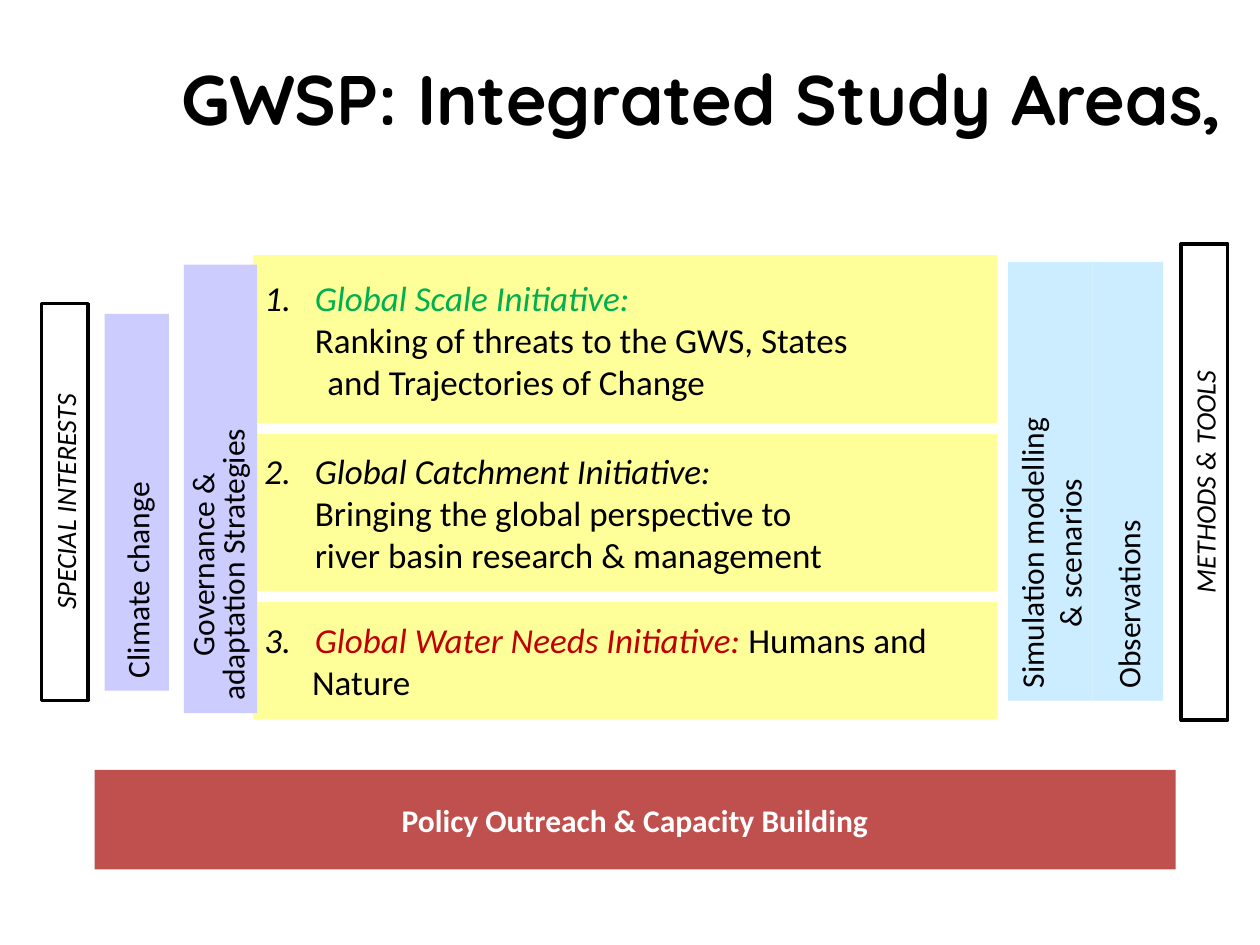
from lxml import etree
from pptx import Presentation
from pptx.dml.color import RGBColor
from pptx.enum import shapes, text
from pptx.oxml import ns
from pptx.util import Pt

BLACK = RGBColor(0, 0, 0)
WHITE = RGBColor(255, 255, 255)
YELLOW = RGBColor(0xFF, 0xFF, 0x99)
LILAC = RGBColor(0xCC, 0xCC, 0xFF)
SKY = RGBColor(0xCC, 0xEC, 0xFF)
BRICK = RGBColor(0xC0, 0x50, 0x4D)
GREEN = RGBColor(0, 0xB0, 0x50)
RED = RGBColor(0xC0, 0, 0)

TITLE = "GWSP: Integrated Study Areas,"
OUTREACH = "Policy Outreach & Capacity Building"
INDENT = 28.8

# top, height, heading, heading colour, rest of heading line, (line, indent)
INITIATIVES = [
    (145.5, 96.5, "Global Scale Initiative:", GREEN, "",
     [("Ranking of threats to the GWS, States", INDENT),
      ("and Trajectories of Change", 36)]),
    (247.7, 90.7, "Global Catchment Initiative:", BLACK, "",
     [("Bringing the global perspective to", INDENT),
      ("river basin research & management", INDENT)]),
    (343.5, 67.7, "Global Water Needs Initiative:", RED, " Humans and",
     [("Nature", 27.2)]),
]
THEMES = [
    (59.8, 179.3, 36.7, 215.3, LILAC, ["Climate change"], 1),
    (105.1, 151.2, 41.8, 256.3, LILAC, ["Governance &", "adaptation Strategies"], 0.8),
    (576, 149.8, 48.2, 250.6, SKY, ["Simulation modelling", "& scenarios"], 1),
    (624.2, 149.8, 40.3, 250.6, SKY, ["Observations"], 1),
]
SIDE_LABELS = [
    (-76.3, 273.6, 226.8, "SPECIAL INTERESTS"),
    (552.2, 262.1, 272.2, "METHODS & TOOLS"),
]


def style(run, size, color=BLACK, italic=False, bold=False, face="Calibri"):
    run.font.name = face
    run.font.size = Pt(size)
    run.font.color.rgb = color
    run.font.italic = italic
    run.font.bold = bold


def block(slide, left, top, width, height, fill, line=None, weight=0.75):
    box = slide.shapes.add_shape(shapes.MSO_SHAPE.RECTANGLE,
                                 Pt(left), Pt(top), Pt(width), Pt(height))
    box.shadow.inherit = False
    box.fill.solid()
    box.fill.fore_color.rgb = fill
    if line is None:
        box.line.fill.background()
    else:
        box.line.color.rgb = line
        box.line.width = Pt(weight)
    box.text_frame.vertical_anchor = text.MSO_ANCHOR.MIDDLE
    return box


def write(frame, lines, size, spacing=1, **look):
    frame.text = "\n".join(lines)
    for paragraph in frame.paragraphs:
        paragraph.alignment = text.PP_ALIGN.CENTER
        paragraph.line_spacing = spacing
        for run in paragraph.runs:
            style(run, size, **look)


def indent(paragraph, margin, number=None):
    paragraph.alignment = text.PP_ALIGN.LEFT
    props = paragraph._p.get_or_add_pPr()
    props.set("marL", str(Pt(margin)))
    props.set("indent", str(Pt(-margin) if number else 0))
    if number:
        face = etree.SubElement(props, ns.qn("a:buFont"))
        face.set("typeface", "Calibri")
        bullet = etree.SubElement(props, ns.qn("a:buAutoNum"))
        bullet.set("type", "arabicPeriod")
        bullet.set("startAt", str(number))
        color = etree.Element(ns.qn("a:buClr"))
        etree.SubElement(color, ns.qn("a:srgbClr")).set("val", str(BLACK))
        props.insert(props.index(face), color)


def main():
    deck = Presentation()
    deck.slide_width, deck.slide_height = Pt(720), Pt(540)
    slide = deck.slides.add_slide(deck.slide_layouts[5])

    title = slide.shapes.title
    title.left, title.top, title.width, title.height = Pt(82), Pt(0), Pt(638), Pt(111.6)
    title.text_frame.word_wrap = True
    title.text_frame.vertical_anchor = text.MSO_ANCHOR.MIDDLE
    write(title.text_frame, [TITLE], 40, bold=True, face="Quicksand")

    for number, (top, height, heading, color, rest, lines) in enumerate(INITIATIVES, 1):
        frame = block(slide, 144, top, 426.2, height, YELLOW, WHITE).text_frame
        frame.word_wrap = True
        first = frame.paragraphs[0]
        indent(first, INDENT, number)
        name = first.add_run()
        name.text = heading
        style(name, 20, color, italic=True)
        if rest:
            tail = first.add_run()
            tail.text = rest
            style(tail, 20)
        for line, margin in lines:
            paragraph = frame.add_paragraph()
            indent(paragraph, margin)
            paragraph.text = line
            style(paragraph.runs[0], 20)

    for left, top, width, height, fill, lines, spacing in THEMES:
        theme = block(slide, left, top, width, height, fill)
        theme.rotation = 180
        theme.text_frame.word_wrap = False
        theme.text_frame._txBody.bodyPr.set("vert", "eaVert")
        write(theme.text_frame, lines, 18, spacing)

    for left, top, width, label in SIDE_LABELS:
        side = block(slide, left, top, width, 26.6, WHITE, BLACK, 2)
        side.rotation = 270
        side.text_frame.word_wrap = True
        write(side.text_frame, [label], 16, italic=True)

    outreach = block(slide, 54, 440, 617.8, 56.9, BRICK)
    outreach.text_frame.word_wrap = True
    write(outreach.text_frame, [OUTREACH], 18, color=WHITE, bold=True)

    deck.save("out.pptx")


if __name__ == "__main__":
    main()
